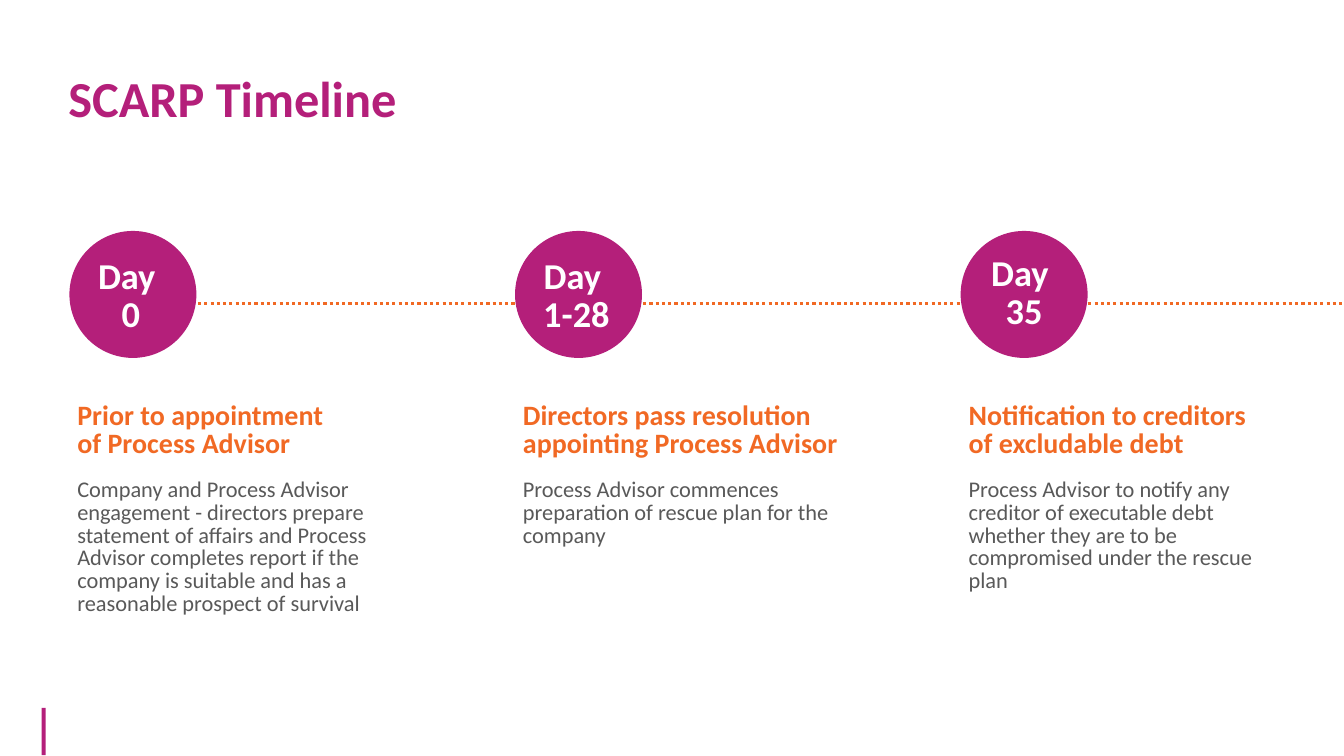
from lxml import etree
from pptx import Presentation
from pptx.dml.color import RGBColor
from pptx.enum import dml, shapes, text
from pptx.oxml.ns import qn
from pptx.util import Cm, Pt

COLORS = {"purple": "B41F7A", "orange": "F16924", "grey": "595959", "white": "FFFFFF"}
SLIDE_WIDTH, SLIDE_HEIGHT = 33.87, 19.05
COLUMN_LEFT, COLUMN_TOP, COLUMN_PITCH = 1.7, 5.82, 11.23
CIRCLE_SIZE = 3.2
STEPS = [
    {
        "day": "Day \n0",
        "heading": "Prior to appointment\nof Process Advisor",
        "body": "Company and Process Advisor engagement - directors prepare statement of "
                "affairs and Process Advisor completes report if the\n"
                "company is suitable and has a reasonable prospect of survival",
        "heading_width": 9.73,
        "label_shift": (0, 0),
        "body_height": 3.68,
    },
    {
        "day": "Day \n1-28",
        "heading": "Directors pass resolution appointing Process Advisor",
        "body": "Process Advisor commences preparation of rescue plan for the company",
        "heading_width": 9.73,
        "label_shift": (0, 0),
        "body_height": 2.54,
    },
    {
        "day": "Day \n35",
        "heading": "Notification to creditors of excludable debt",
        "body": "Process Advisor to notify any creditor of executable debt whether they "
                "are to be compromised under the rescue plan",
        "heading_width": 8,
        "label_shift": (0.05, -0.08),
        "body_height": 3.68,
    },
]


def rgb(name):
    """Return the named colour."""
    return RGBColor.from_string(COLORS[name])


def format_text(frame, size, color, bold, spacing, align=text.PP_ALIGN.LEFT):
    """Format every paragraph and run of a text frame."""
    for paragraph in frame.paragraphs:
        paragraph.alignment = align
        paragraph.line_spacing = spacing
        for run in paragraph.runs:
            run.font.name = "Calibri"
            run.font.size = Pt(size)
            run.font.bold = bold
            run.font.color.rgb = rgb(color)


def add_text(parent, box, content, *style):
    """Add a wrapping text box that fits its text."""
    frame = parent.shapes.add_textbox(*map(Cm, box)).text_frame
    frame.word_wrap = True
    frame.auto_size = text.MSO_AUTO_SIZE.SHAPE_TO_FIT_TEXT
    frame.text = content
    format_text(frame, *style)


def add_filled(parent, kind, box):
    """Add a plain purple shape."""
    shape = parent.shapes.add_shape(kind, *map(Cm, box))
    shape.shadow.inherit = False
    shape.fill.solid()
    shape.fill.fore_color.rgb = rgb("purple")
    shape.line.fill.background()


def add_title(slide, box):
    """Place and format the title placeholder."""
    title = slide.shapes.title
    title.left, title.top, title.width, title.height = map(Cm, box)
    frame = title.text_frame
    frame.text = "SCARP Timeline"
    frame.auto_size = text.MSO_AUTO_SIZE.NONE
    frame.vertical_anchor = text.MSO_ANCHOR.MIDDLE
    format_text(frame, 36, "purple", True, 0.8)


def add_track(slide, left, right, top):
    """Draw the dotted line behind the days."""
    track = slide.shapes.add_connector(
        shapes.MSO_CONNECTOR.STRAIGHT, Cm(left), Cm(top), Cm(right), Cm(top))
    track.line.color.rgb = rgb("orange")
    track.line.width = Pt(2.25)
    track.line.dash_style = dml.MSO_LINE.ROUND_DOT
    etree.SubElement(track._element.spPr, qn("a:effectLst"))


def add_step(slide, left, top, step):
    """Build one grouped timeline step."""
    group = slide.shapes.add_group_shape()
    group_parent = group
    shift_x, shift_y = step["label_shift"]
    add_filled(group_parent, shapes.MSO_SHAPE.OVAL,
               (left + 0.05, top, CIRCLE_SIZE, CIRCLE_SIZE))
    add_text(group_parent, (left + shift_x, top + 0.58 + shift_y, CIRCLE_SIZE, 2.18),
             step["day"], 26, "white", True, Pt(27.2), text.PP_ALIGN.CENTER)
    add_text(group_parent, (left, top + 4.21, step["heading_width"], 1.7),
             step["heading"], 20, "orange", True, Pt(20.2))
    add_text(group_parent, (left, top + 6.14, 8.36, step["body_height"]),
             step["body"], 16, "grey", False, Pt(16.2))


def main():
    """Build and save the timeline slide."""
    presentation = Presentation()
    presentation.slide_width = Cm(SLIDE_WIDTH)
    presentation.slide_height = Cm(SLIDE_HEIGHT)
    slide = presentation.slides.add_slide(presentation.slide_layouts[5])
    add_filled(slide, shapes.MSO_SHAPE.RECTANGLE, (1.05, 17.84, 0.1, 1.19))
    add_track(slide, 2.62, SLIDE_WIDTH, 7.65)
    add_title(slide, (1.47, 1.78, 22.35, 1.63))
    for index, step in enumerate(STEPS):
        add_step(slide, COLUMN_LEFT + index * COLUMN_PITCH, COLUMN_TOP, step)
    presentation.save("out.pptx")


if __name__ == "__main__":
    main()
